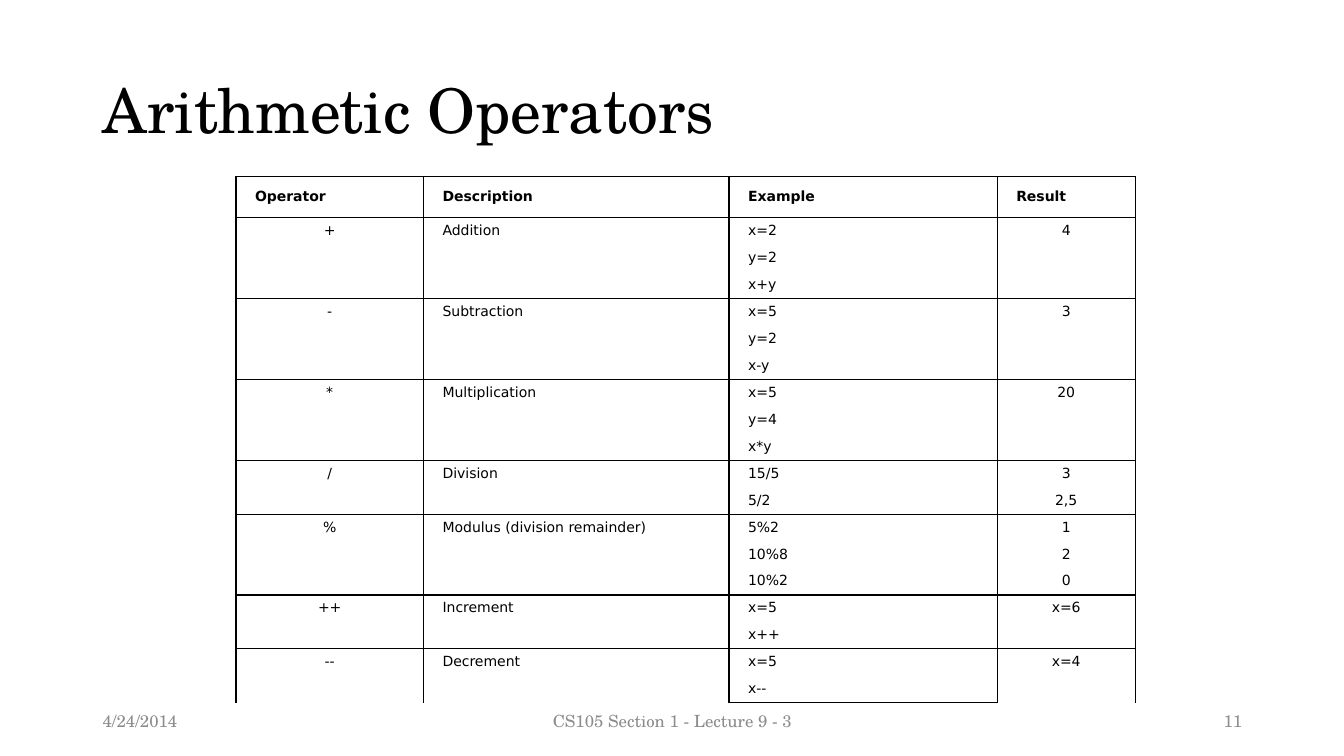
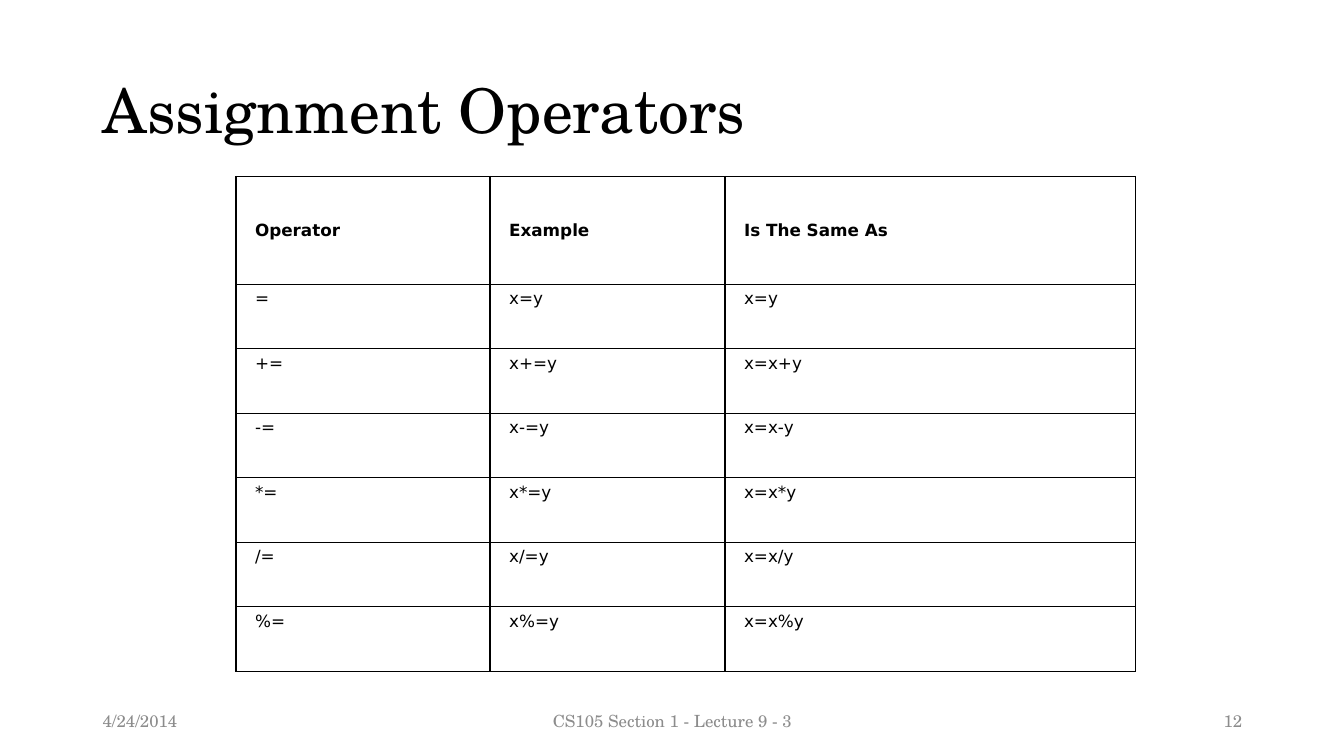
from itertools import accumulate

from lxml.etree import SubElement
from pptx import Presentation
from pptx.dml.color import RGBColor
from pptx.enum.text import MSO_ANCHOR, MSO_AUTO_SIZE, PP_ALIGN
from pptx.oxml.ns import qn
from pptx.util import Emu, Pt

LEFT, CENTER, RIGHT = PP_ALIGN.LEFT, PP_ALIGN.CENTER, PP_ALIGN.RIGHT
TOP, MIDDLE = MSO_ANCHOR.TOP, MSO_ANCHOR.MIDDLE
SERIF, SANS = "TeX Gyre Schola", "DejaVu Sans"
BLACK, WHITE, GRAY = "000000", "FFFFFF", "8C8C8C"
PLAIN_TABLE = "{2D5ABB26-0587-4C30-8999-92F81FD0307C}"

ARITHMETIC = [
    [["+"], ["Addition"], ["x=2", "y=2", "x+y"], ["4"]],
    [["-"], ["Subtraction"], ["x=5", "y=2", "x-y"], ["3"]],
    [["*"], ["Multiplication"], ["x=5", "y=4", "x*y"], ["20"]],
    [["/"], ["Division"], ["15/5", "5/2"], ["3", "2,5"]],
    [["%"], ["Modulus (division remainder)"], ["5%2", "10%8", "10%2"], ["1", "2", "0"]],
    [["++"], ["Increment"], ["x=5", "x++"], ["x=6"]],
    [["--"], ["Decrement"], ["x=5", "x--"], ["x=4"]],
]
ASSIGNMENT = [[["="], ["x=y"], ["x=y"]]] + [
    [[f"{sign}="], [f"x{sign}=y"], [f"x=x{sign}y"]] for sign in "+-*/%"
]


def px(length):
    """Turn px into EMU, at 100 px to the inch."""
    return Emu(length * 9144)


def color(code):
    """Turn a hex string into a colour."""
    return RGBColor.from_string(code)


def write(frame, text, size, font=SERIF, fill=BLACK, bold=False, align=LEFT,
          anchor=MIDDLE, spacing=None, hanging=0):
    """Put one formatted paragraph in a text frame."""
    frame.word_wrap = True
    frame.vertical_anchor = anchor
    para = frame.paragraphs[0]
    para.alignment = align
    para.line_spacing = spacing
    if hanging:
        properties = para._p.get_or_add_pPr()
        properties.set("marL", str(px(hanging)))
        properties.set("indent", str(px(-hanging)))
    span = para.add_run()
    span.text = text
    span.font.name, span.font.size, span.font.bold = font, Pt(size), bold
    span.font.color.rgb = color(fill)


class Lecture:
    """Hold the deck, its style and the current page."""

    def __init__(self):
        """Start an empty wide deck."""
        self.deck = Presentation()
        self.deck.slide_width, self.deck.slide_height = px(1333), px(750)
        self.page = None

    def add_page(self, title, number):
        """Start a page with its title and footers."""
        self.page = self.deck.slides.add_slide(self.deck.slide_layouts[5])
        box = self.page.shapes.title
        box.left, box.top, box.width, box.height = map(px, (92, 40, 1150, 145))
        box.text_frame.auto_size = MSO_AUTO_SIZE.NONE
        write(box.text_frame, title, 44, spacing=0.9)
        self.add_footer("4/24/2014", 92, 300, LEFT)
        self.add_footer("CS105 Section 1 - Lecture 9 - 3", 442, 450, CENTER)
        self.add_footer(str(number), 942, 300, RIGHT)

    def add_footer(self, text, left, width, align):
        """Add one gray text at the foot of the page."""
        box = self.page.shapes.add_textbox(px(left), px(695), px(width), px(40))
        write(box.text_frame, text, 12, fill=GRAY, align=align)

    def add_grid(self, headings, groups, widths, heights, size, centered=()):
        """Add a ruled table, merging a lone entry down its whole group."""
        groups = [[[heading] for heading in headings]] + groups
        counts = [max(map(len, group)) for group in groups]
        header_height, row_height = heights
        row_heights = [header_height] + [row_height] * (sum(counts) - 1)
        table = self.page.shapes.add_table(
            sum(counts), len(widths), px(234), px(175),
            px(sum(widths)), px(sum(row_heights))).table
        table.first_row = table.horz_banding = False
        table._tbl.tblPr.find(qn("a:tableStyleId")).text = PLAIN_TABLE
        for column, width in zip(table.columns, widths):
            column.width = px(width)
        for row, height in zip(table.rows, row_heights):
            row.height = px(height)
        for start, count, group in zip(accumulate([0] + counts), counts, groups):
            for column, entries in enumerate(group):
                cells = [table.cell(start + step, column) for step in range(count)]
                block = 1 if len(entries) == count else count
                if block > 1:
                    cells[0].merge(cells[-1])
                for step, cell in enumerate(cells):
                    self.rule_cell(cell, step == 0, step == count - 1)
                for cell, text in zip(cells, entries):
                    header = start == 0
                    middle = column in centered and not header
                    cell.vertical_anchor = MIDDLE if header else TOP
                    write(cell.text_frame, text, size, font=SANS, bold=header,
                          align=CENTER if middle else LEFT,
                          anchor=cell.vertical_anchor, hanging=38)

    def rule_cell(self, cell, first, last):
        """Set the borders, margins and fill of a cell."""
        properties = cell._tc.get_or_add_tcPr()
        for side, shown in (("L", True), ("R", True), ("T", first), ("B", last)):
            line = SubElement(properties, qn(f"a:ln{side}"), w=str(Pt(1)))
            if shown:
                paint = SubElement(line, qn("a:solidFill"))
                SubElement(paint, qn("a:srgbClr"), val=BLACK)
            else:
                SubElement(line, qn("a:noFill"))
        cell.margin_left = cell.margin_right = px(19)
        cell.margin_top = cell.margin_bottom = px(5)
        cell.fill.solid()
        cell.fill.fore_color.rgb = color(WHITE)


def main():
    """Build and save both pages."""
    lecture = Lecture()
    lecture.add_page("Arithmetic Operators", 11)
    lecture.add_grid(["Operator", "Description", "Example", "Result"], ARITHMETIC,
                     [186, 303, 266, 137], (41, 26), 10, centered=(0, 3))
    lecture.add_page("Assignment Operators", 12)
    lecture.add_grid(["Operator", "Example", "Is The Same As"], ASSIGNMENT,
                     [252, 233, 407], (107, 64), 12)
    lecture.deck.save("out.pptx")


if __name__ == "__main__":
    main()
